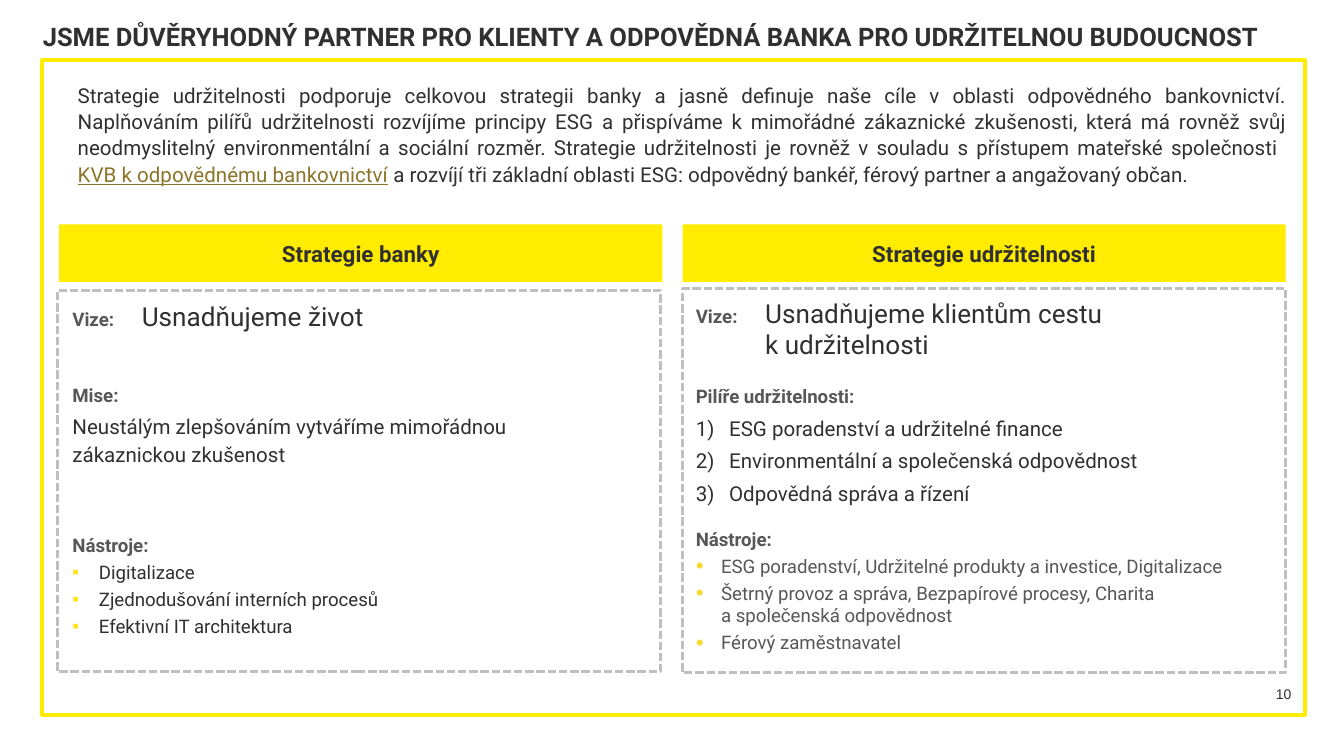
import copy
from dataclasses import dataclass
from typing import Any, Optional

import pptx
import pptx.dml.color
import pptx.enum.dml
import pptx.enum.shapes
import pptx.enum.text
import pptx.oxml.ns
import pptx.util
from lxml import etree

Cm, Pt = pptx.util.Cm, pptx.util.Pt
ALIGN = pptx.enum.text.PP_ALIGN
ANCHOR = pptx.enum.text.MSO_ANCHOR

YELLOW, DARK, GREY, BORDER = "FFEC00", "303030", "575757", "BFBFBF"


@dataclass(frozen=True)
class Box:
    left: float
    top: float
    width: float
    height: float

    def lengths(self) -> list[int]:
        return [Cm(value) for value in (self.left, self.top, self.width, self.height)]


@dataclass(frozen=True)
class Run:
    text: str
    size: float
    color: str = DARK
    bold: bool = False
    underline: bool = False
    font: str = "Roboto"


@dataclass(frozen=True)
class Bullet:
    tag: str
    value: str
    color: str
    percent: int = 100


@dataclass(frozen=True)
class Paragraph:
    runs: tuple[Run, ...]
    before: float = 0
    line: Optional[float] = None
    align: Any = ALIGN.LEFT
    hang: float = 0
    bullet: Optional[Bullet] = None


@dataclass(frozen=True)
class Column:
    left: float
    heading: str
    text_box: Box
    border: Box
    paragraphs: tuple[Paragraph, ...]


def rgb(value: str) -> pptx.dml.color.RGBColor:
    return pptx.dml.color.RGBColor.from_string(value)


def set_all(target: Any, values: dict[str, Any]) -> None:
    for name, value in values.items():
        setattr(target, name, value)


def add_child(parent: Any, tag: str, **attributes: str) -> Any:
    return etree.SubElement(parent, pptx.oxml.ns.qn(tag), attributes)


def add_bullet(properties: Any, bullet: Bullet) -> None:
    add_child(add_child(properties, "a:buClr"), "a:srgbClr", val=bullet.color)
    add_child(properties, "a:buSzPct", val=str(bullet.percent * 1000))
    if bullet.tag == "a:buChar":
        add_child(properties, "a:buFont", typeface="Arial")
        add_child(properties, bullet.tag, char=bullet.value)
    else:
        add_child(properties, bullet.tag, type=bullet.value)


def add_run(paragraph: Any, item: Run) -> None:
    """Add a run, with a line break at each newline."""
    for index, text in enumerate(item.text.split("\n")):
        if index:
            paragraph.add_line_break()
            line_break = paragraph._p[-1]
            line_break.append(copy.deepcopy(run._r.get_or_add_rPr()))
        run = paragraph.add_run()
        run.text = text
        set_all(run.font, {"name": item.font, "size": Pt(item.size),
                           "bold": item.bold, "underline": item.underline})
        run.font.color.rgb = rgb(item.color)


def fill_text(shape: Any, items: tuple[Paragraph, ...], anchor: Any = ANCHOR.TOP) -> None:
    frame = shape.text_frame
    set_all(frame, {"word_wrap": True, "vertical_anchor": anchor})
    for index, item in enumerate(items):
        paragraph = frame.add_paragraph() if index else frame.paragraphs[0]
        properties = paragraph._p.get_or_add_pPr()
        if item.hang:
            properties.set("marL", str(Cm(item.hang)))
            properties.set("indent", str(-Cm(item.hang)))
        if item.bullet:
            add_bullet(properties, item.bullet)
        set_all(paragraph, {"alignment": item.align, "space_before": Pt(item.before)})
        if item.line:
            paragraph.line_spacing = Pt(item.line)
        for run in item.runs:
            add_run(paragraph, run)


def add_text(slide: Any, box: Box, items: tuple[Paragraph, ...], anchor: Any = ANCHOR.TOP) -> None:
    fill_text(slide.shapes.add_textbox(*box.lengths()), items, anchor)


def add_rectangle(slide: Any, box: Box, fill: Optional[str] = None, line: Optional[str] = None,
                  width: float = 1, dash: Any = None) -> Any:
    shape = slide.shapes.add_shape(pptx.enum.shapes.MSO_SHAPE.RECTANGLE, *box.lengths())
    shape.shadow.inherit = False
    if fill:
        shape.fill.solid()
        shape.fill.fore_color.rgb = rgb(fill)
    else:
        shape.fill.background()
    if line:
        shape.line.color.rgb = rgb(line)
        set_all(shape.line, {"width": Pt(width), "dash_style": dash})
    else:
        shape.line.fill.background()
    return shape


def label(text: str, before: float) -> Paragraph:
    return Paragraph((Run(text, 10, GREY, bold=True),), before)


def vision(text: str) -> Paragraph:
    return Paragraph((Run("Vize:\t", 10, GREY, bold=True), Run(text, 14)), hang=1.31)


def bullets(texts: tuple[str, ...], bullet: Bullet, size: float, color: str, hang: float,
            before: float, line: Optional[float] = None) -> tuple[Paragraph, ...]:
    return tuple(Paragraph((Run(text, size, color),), before, line, hang=hang, bullet=bullet)
                 for text in texts)


SQUARE = Bullet("a:buChar", "▪", "FFE413")
DOT = Bullet("a:buChar", "•", "F5DB2E", 120)
NUMBER = Bullet("a:buAutoNum", "arabicParenR", DARK)

INTRO = Paragraph((
    Run("Strategie udržitelnosti podporuje celkovou strategii banky a jasně definuje naše cíle v oblasti "
        "odpovědného bankovnictví. Naplňováním pilířů udržitelnosti rozvíjíme principy ESG a přispíváme "
        "k mimořádné zákaznické zkušenosti, která má rovněž svůj neodmyslitelný environmentální "
        "a sociální rozměr. Strategie udržitelnosti je rovněž v souladu s přístupem mateřské společnosti \n", 11),
    Run("KVB k odpovědnému bankovnictví", 11, "8C752A", underline=True),
    Run(" a rozvíjí tři základní oblasti ESG: odpovědný bankéř, férový partner a angažovaný občan.", 11),
), line=14, align=ALIGN.JUSTIFY)

COLUMNS = (
    Column(1.12, "Strategie banky", Box(1.12, 5.56, 10.01, 7.72), Box(1.09, 5.49, 11.4, 7.21), (
        vision("Usnadňujeme život"),
        label("Mise:", 27.6),
        Paragraph((Run("Neustálým zlepšováním vytváříme mimořádnou zákaznickou zkušenost", 11),), 2.5, 15),
        label("Nástroje:", 36),
        *bullets(("Digitalizace", "Zjednodušování interních procesů", "Efektivní IT architektura"),
                 SQUARE, 10, DARK, 0.5, 2.4),
    )),
    Column(12.9, "Strategie udržitelnosti", Box(12.9, 5.49, 11.58, 7.87), Box(12.9, 5.46, 11.4, 7.26), (
        vision("Usnadňujeme klientům cestu \nk udržitelnosti"),
        label("Pilíře udržitelnosti:", 13.6),
        *bullets(("ESG poradenství a udržitelné finance", "Environmentální a společenská odpovědnost",
                  "Odpovědná správa a řízení"), NUMBER, 11, DARK, 0.63, 2.5, 15),
        label("Nástroje:", 12),
        *bullets(("ESG poradenství, Udržitelné produkty a investice, Digitalizace",
                  "Šetrný provoz a správa, Bezpapírové procesy, Charita \na společenská odpovědnost",
                  "Férový zaměstnavatel"), DOT, 10, GREY, 0.48, 2.4),
    )),
)


def main() -> None:
    presentation = pptx.Presentation()
    set_all(presentation, {"slide_width": Cm(25.4), "slide_height": Cm(14.29)})
    slide = presentation.slides.add_slide(presentation.slide_layouts[6])

    # Slide number, frame, title and introduction
    add_text(slide, Box(23.44, 12.73, 1.22, 0.76),
             (Paragraph((Run("10", 7.5, font="Arial"),), align=ALIGN.RIGHT),), ANCHOR.MIDDLE)
    add_rectangle(slide, Box(0.79, 1.14, 23.88, 12.37), line=YELLOW, width=2)
    title = Run("JSME DŮVĚRYHODNÝ PARTNER PRO KLIENTY A ODPOVĚDNÁ BANKA PRO UDRŽITELNOU BUDOUCNOST", 13.7, bold=True)
    add_text(slide, Box(0.56, 0.28, 24.1, 2.97), (Paragraph((title,)),))
    add_text(slide, Box(1.22, 1.42, 23.37, 2.01), (INTRO,))

    # Two strategy columns: heading, text and dashed border
    for column in COLUMNS:
        heading = add_rectangle(slide, Box(column.left, 4.24, 11.4, 1.09), fill=YELLOW)
        fill_text(heading, (Paragraph((Run(column.heading, 12, bold=True),), align=ALIGN.CENTER),), ANCHOR.MIDDLE)
        add_text(slide, column.text_box, column.paragraphs)
        add_rectangle(slide, column.border, line=BORDER, width=1.5, dash=pptx.enum.dml.MSO_LINE.SQUARE_DOT)

    presentation.save("out.pptx")


if __name__ == "__main__":
    main()
